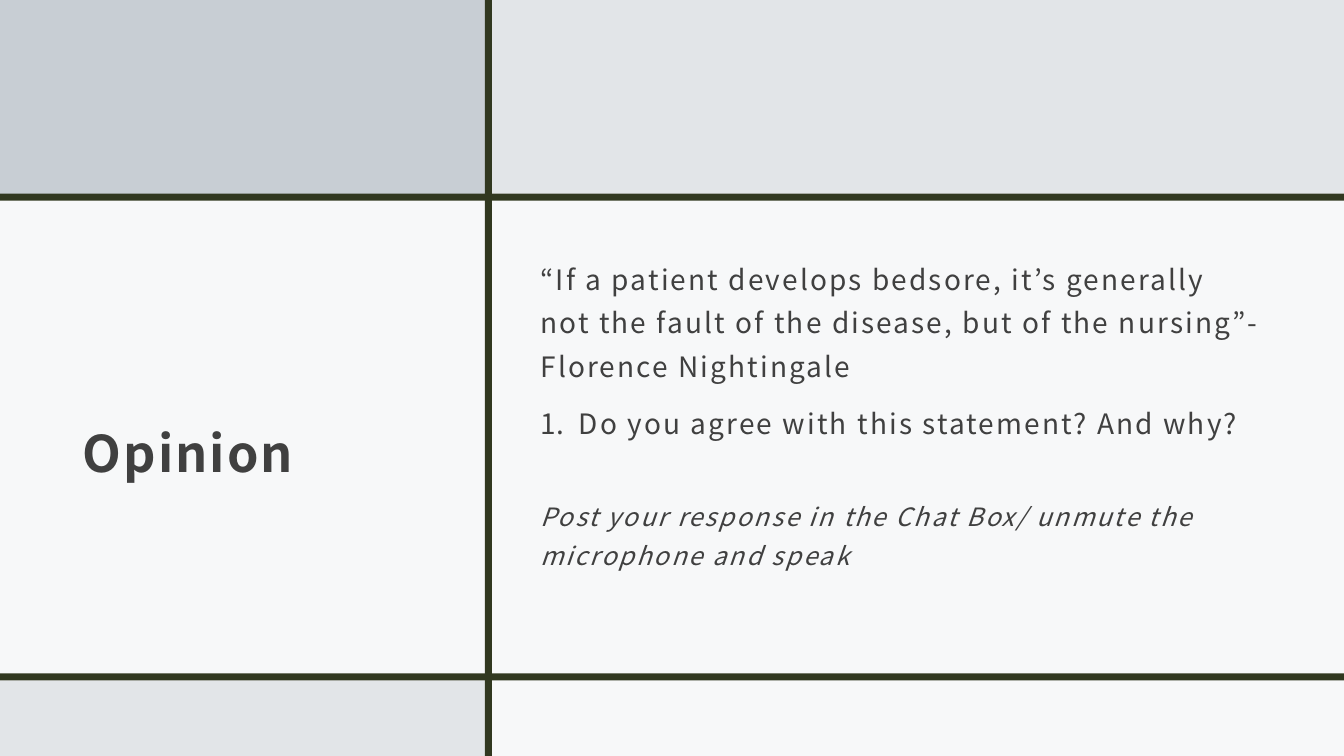
from lxml import etree
from pptx import Presentation
from pptx.dml.color import RGBColor
from pptx.enum.shapes import MSO_SHAPE
from pptx.enum.text import MSO_ANCHOR
from pptx.oxml.ns import qn
from pptx.util import Inches, Pt

RECTANGLE = MSO_SHAPE.RECTANGLE
MIDDLE = MSO_ANCHOR.MIDDLE

COLORS = {"backdrop": "E2E5E8", "panel": "FFFFFF", "corner": "C8CED4",
          "rule": "313820", "text": "404040"}
FONT = "Noto Sans CJK JP"
WIDTH, HEIGHT = 13.33, 7.5
RULE = 0.07
COLUMN = 4.81            # left edge of the vertical rule
ROWS = (1.92, 6.68)      # top edges of the horizontal rules
TEXT_TOP, TEXT_HEIGHT = 2.34, 3.98
PANEL_OPACITY = 75
LETTER_SPACING = 150     # hundredths of a point
SPACE_BEFORE = 9.3
INDENT = Inches(0.38)


def add_block(page, box, color, opacity=100):
    block = page.shapes.add_shape(RECTANGLE, *map(Inches, box))
    block.shadow.inherit = False
    block.line.fill.background()
    block.fill.solid()
    block.fill.fore_color.rgb = RGBColor.from_string(COLORS[color])
    if opacity < 100:
        tint = block.fill._xPr.find(qn("a:solidFill"))[0]
        etree.SubElement(tint, qn("a:alpha"), val=str(opacity * 1000))


def add_grid(page):
    """Draw the tinted cells and the three rules that part them."""
    top, bottom = ROWS
    below = bottom + RULE
    add_block(page, (0, top, WIDTH, below - top), "panel", PANEL_OPACITY)
    add_block(page, (0, 0, COLUMN + RULE / 2, top + RULE / 2), "corner")
    add_block(page, (COLUMN, below, WIDTH - COLUMN, HEIGHT - below),
              "panel", PANEL_OPACITY)
    for row in ROWS:
        add_block(page, (0, row, WIDTH, RULE), "rule")
    add_block(page, (COLUMN, 0, RULE, HEIGHT), "rule")


def add_text_frame(page, box):
    frame = page.shapes.add_textbox(*map(Inches, box)).text_frame
    frame.word_wrap = True
    frame.vertical_anchor = MIDDLE
    frame.margin_left = frame.margin_right = frame.margin_top = Inches(0.12)
    frame.margin_bottom = Inches(0.1)
    return frame


def write(para, text, size, line_spacing, before=0, bold=False, italic=False):
    span = para.add_run()
    span.text = text
    span.font._element.set("spc", str(LETTER_SPACING))
    para.line_spacing = line_spacing
    para.space_before = Pt(before)
    font = para.font
    font.name, font.size = FONT, Pt(size)
    font.bold, font.italic = bold, italic
    font.color.rgb = RGBColor.from_string(COLORS["text"])


def number(para):
    """Give the paragraph an automatic number with a hanging indent."""
    properties = para._p.get_or_add_pPr()
    properties.set("marL", str(INDENT))
    properties.set("indent", str(-INDENT))
    bullet = etree.Element(qn("a:buAutoNum"), type="arabicPeriod")
    properties.find(qn("a:defRPr")).addprevious(bullet)


def add_title(page, box):
    frame = add_text_frame(page, box)
    write(frame.paragraphs[0], "Opinion", 36, 1.5, bold=True)


def add_discussion(page, box):
    frame = add_text_frame(page, box)
    quote, question = frame.paragraphs[0], frame.add_paragraph()
    write(quote, "“If a patient develops bedsore, it’s generally not the fault "
          "of the disease, but of the nursing”- Florence Nightingale",
          20, 1.3, SPACE_BEFORE)
    write(question, "Do you agree with this statement? And why?",
          20, 1.3, SPACE_BEFORE)
    number(question)
    write(frame.add_paragraph(), "Post your response in the Chat Box/ unmute "
          "the microphone and speak", 18, 1.3, 4 * SPACE_BEFORE, italic=True)


def main():
    deck = Presentation()
    deck.slide_width, deck.slide_height = Inches(WIDTH), Inches(HEIGHT)
    page = deck.slides.add_slide(deck.slide_layouts[6])
    page.background.fill.solid()
    page.background.fill.fore_color.rgb = RGBColor.from_string(COLORS["backdrop"])
    add_grid(page)
    add_title(page, (0.7, TEXT_TOP, 3.73, TEXT_HEIGHT))
    add_discussion(page, (5.24, TEXT_TOP, 7.39, TEXT_HEIGHT - 0.52))
    deck.save("out.pptx")


if __name__ == "__main__":
    main()
